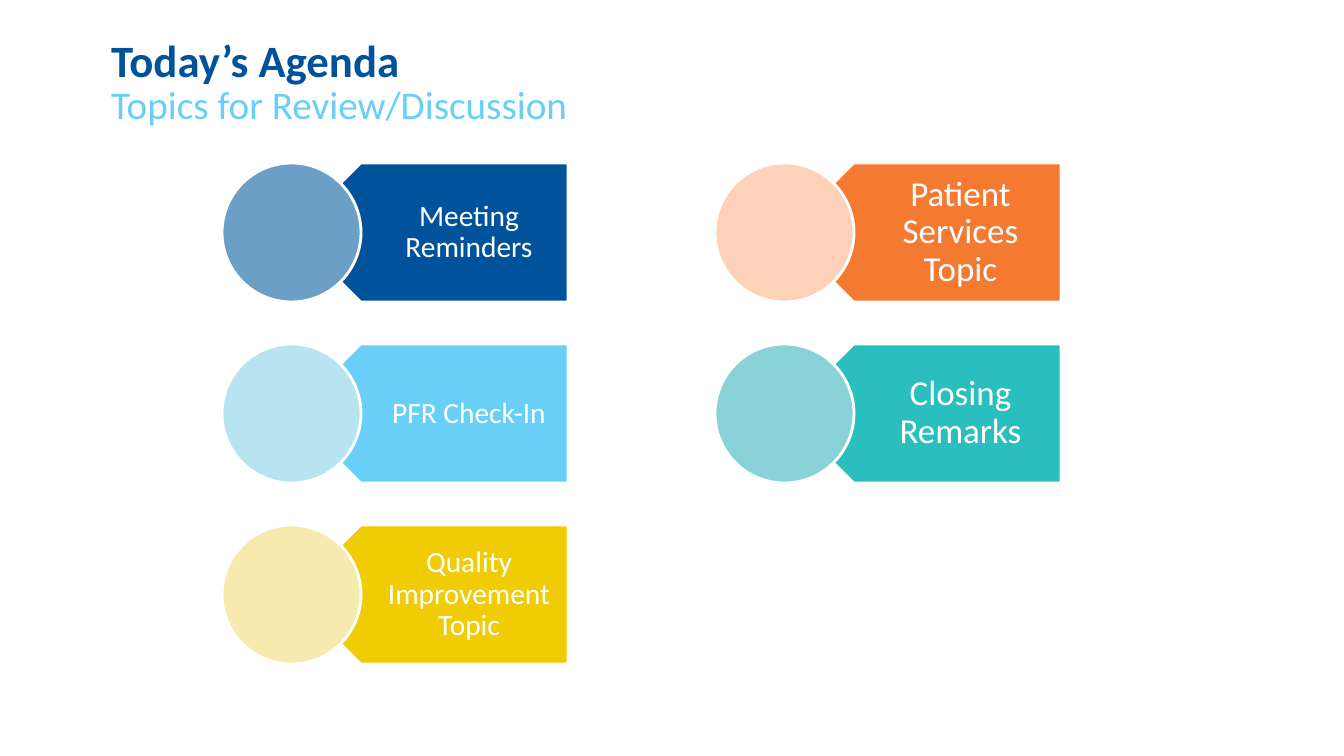
from dataclasses import dataclass

from lxml.etree import SubElement
from pptx import Presentation
from pptx.dml.color import RGBColor
from pptx.enum.shapes import MSO_SHAPE as Shape
from pptx.enum.text import MSO_ANCHOR as Anchor, MSO_AUTO_SIZE as AutoSize, PP_ALIGN as Align
from pptx.oxml.ns import qn
from pptx.util import Pt

EMU_PER_PX = 914400 / 100.8


@dataclass(frozen=True)
class Theme:
    font: str = "Calibri"
    navy: str = "00529B"
    sky: str = "69CFF7"
    white: str = "FFFFFF"
    title_size: int = 32
    subtitle_size: int = 28
    outline: int = 2


THEME = Theme()

# Each topic: label, banner colour, circle colour
REVIEW_TOPICS = [
    ("Meeting Reminders", THEME.navy, "6B9FC5"),
    ("PFR Check-In", THEME.sky, "B8E4F2"),
    ("Quality Improvement Topic", "F0CC04", "F6EAAE"),
]
CLOSING_TOPICS = [
    ("Patient Services Topic", "F47931", "FDD2B9"),
    ("Closing Remarks", "2BBEBF", "89D2D8"),
]


def px(length):
    return round(length * EMU_PER_PX)


def set_all(target, values):
    for name, value in values.items():
        setattr(target, name, value)


def write(paragraph, text, size, color, bold=False):
    paragraph.text = text
    set_all(paragraph.font, {"name": THEME.font, "size": Pt(size), "bold": bold})
    paragraph.font.color.rgb = RGBColor.from_string(color)


def place(part, left, top, width, height):
    set_all(part, {"left": px(left), "top": px(top),
                   "width": px(width), "height": px(height)})


def add_heading(slide, left, top, width):
    title, subtitle = slide.shapes.title, slide.placeholders[1]
    place(title, left, top, width, 68)
    place(subtitle, left, top + 49, width, 49)

    for placeholder, anchor in ((title, Anchor.MIDDLE), (subtitle, Anchor.TOP)):
        set_all(placeholder.text_frame, {
            "auto_size": AutoSize.NONE, "word_wrap": True, "vertical_anchor": anchor})
        paragraph = placeholder.text_frame.paragraphs[0]
        set_all(paragraph, {"alignment": Align.LEFT, "space_before": Pt(0)})

    properties = subtitle.text_frame.paragraphs[0]._p.get_or_add_pPr()
    properties.set("marL", "0")
    properties.set("indent", "0")
    SubElement(properties, qn("a:buNone"))

    write(title.text_frame.paragraphs[0], "Today’s Agenda",
          THEME.title_size, THEME.navy, bold=True)
    write(subtitle.text_frame.paragraphs[0], "Topics for Review/Discussion",
          THEME.subtitle_size, THEME.sky)


def add_outlined(slide, kind, color, left, top, width, height):
    outlined = slide.shapes.add_shape(kind, px(left), px(top), px(width), px(height))
    outlined.shadow.inherit = False
    outlined.fill.solid()
    outlined.fill.fore_color.rgb = RGBColor.from_string(color)
    outlined.line.color.rgb = RGBColor.from_string(THEME.white)
    outlined.line.width = Pt(THEME.outline)
    return outlined


def add_topic(slide, topic, left, top, width, height, size, margins):
    """Place a left-pointing banner, its label and the circle over its tip."""
    text, banner_color, circle_color = topic
    tip = left + height // 2
    right = left + width

    banner = add_outlined(slide, Shape.PENTAGON, banner_color,
                          tip, top, right - tip, height)
    banner.rotation = 180

    label_left = tip + height // 4
    label = slide.shapes.add_textbox(px(label_left), px(top),
                                     px(right - label_left), px(height))
    set_all(label.text_frame, {"word_wrap": True, "vertical_anchor": Anchor.MIDDLE})
    set_all(label.text_frame, {f"margin_{side}": px(gap) for side, gap in margins.items()})
    paragraph = label.text_frame.paragraphs[0]
    set_all(paragraph, {"alignment": Align.CENTER, "line_spacing": 0.9})
    write(paragraph, text, size, THEME.white)

    add_outlined(slide, Shape.OVAL, circle_color, left, top, height, height)


def add_topic_column(slide, topics, left, top, size, margins):
    width, height, gap = 346, 139, 42
    for row, topic in enumerate(topics):
        add_topic(slide, topic, left, top + row * (height + gap),
                  width, height, size, margins)


def main():
    deck = Presentation()
    set_all(deck, {"slide_width": px(1344), "slide_height": px(756)})
    slide = deck.slides.add_slide(deck.slide_layouts[1])

    add_heading(slide, left=101, top=26, width=1068)
    add_topic_column(slide, REVIEW_TOPICS, left=222, top=163, size=21,
                     margins={"left": 61, "top": 9, "right": 16, "bottom": 9})
    add_topic_column(slide, CLOSING_TOPICS, left=715, top=163, size=25,
                     margins={"left": 61, "top": 10, "right": 19, "bottom": 10})
    deck.save("out.pptx")


if __name__ == "__main__":
    main()
